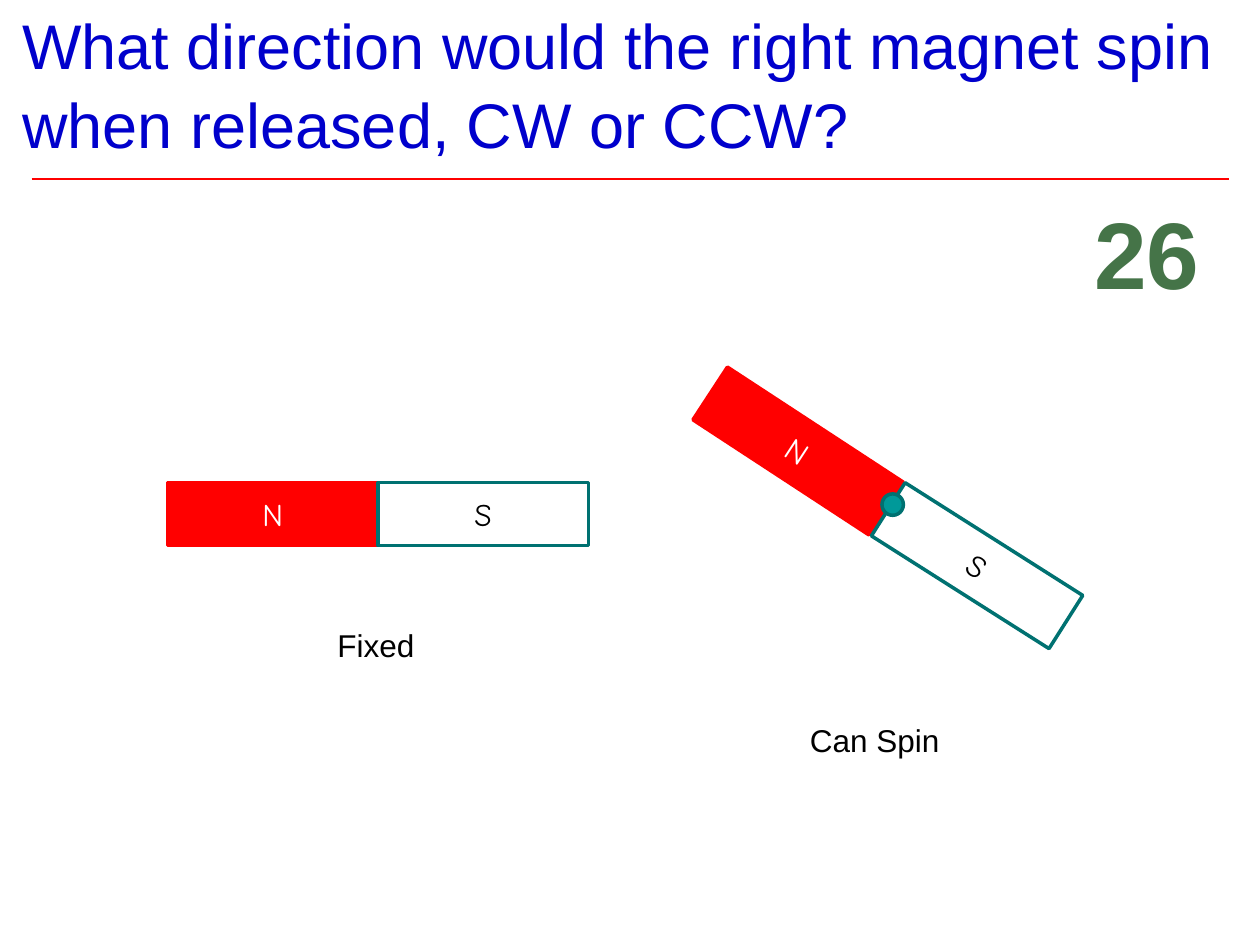
from dataclasses import dataclass

from lxml.etree import SubElement
from pptx import Presentation
from pptx.dml.color import RGBColor
from pptx.enum.shapes import MSO_CONNECTOR, MSO_SHAPE
from pptx.enum.text import MSO_ANCHOR, PP_ALIGN
from pptx.oxml.ns import qn
from pptx.util import Inches, Pt


@dataclass(frozen=True)
class Theme:
    font: str = "Arial"
    pole_font: str = "Comic Neue"
    title: str = "0000CC"
    red: str = "FF0000"
    white: str = "FFFFFF"
    black: str = "000000"
    teal: str = "009999"
    dark_teal: str = "007171"
    green: str = "457448"
    title_size: int = 36
    body_size: int = 18
    number_size: int = 54
    rule_width: float = 1.5
    outline_width: float = 2


THEME = Theme()
POLE_W, POLE_H = 1.67, 0.5


def rgb(color):
    return RGBColor.from_string(color)


def write(tf, text, size, color, font=THEME.font, align=PP_ALIGN.LEFT, bold=False):
    p = tf.paragraphs[0]
    p.text = text
    p.alignment = align
    p.font.name = font
    p.font.size = Pt(size)
    p.font.bold = bold
    p.font.color.rgb = rgb(color)
    return p


def add_text(s, box, text, size, color, wrap=False, anchor=MSO_ANCHOR.TOP, **style):
    tf = s.shapes.add_textbox(*map(Inches, box)).text_frame
    tf.word_wrap = wrap
    tf.vertical_anchor = anchor
    return write(tf, text, size, color, **style)


def add_filled(s, kind, box, fill, line):
    sp = s.shapes.add_shape(kind, *map(Inches, box))
    sp.shadow.inherit = False
    sp.fill.solid()
    sp.fill.fore_color.rgb = rgb(fill)
    sp.line.color.rgb = rgb(line)
    sp.line.width = Pt(THEME.outline_width)
    return sp


def add_pole(s, left, top, letter, fill, line, color, angle):
    sp = add_filled(s, MSO_SHAPE.RECTANGLE, (left, top, POLE_W, POLE_H), fill, line)
    sp.rotation = angle
    sp.text_frame.vertical_anchor = MSO_ANCHOR.MIDDLE
    write(sp.text_frame, letter, THEME.body_size, color,
          font=THEME.pole_font, align=PP_ALIGN.CENTER)


def add_magnet(s, north, south, angles=(0, 0)):
    """Draw both poles; north and south are their unrotated top left corners."""
    add_pole(s, *north, "N", THEME.red, THEME.red, THEME.white, angles[0])
    add_pole(s, *south, "S", THEME.white, THEME.dark_teal, THEME.black, angles[1])


def add_rule(s, left, right, y):
    line = s.shapes.add_connector(
        MSO_CONNECTOR.STRAIGHT, Inches(left), Inches(y), Inches(right), Inches(y))
    line.line.color.rgb = rgb(THEME.red)
    line.line.width = Pt(THEME.rule_width)
    SubElement(line._element.spPr, qn("a:effectLst"))


def main():
    prs = Presentation()
    prs.slide_width, prs.slide_height = Inches(10), Inches(7.5)
    s = prs.slides.add_slide(prs.slide_layouts[6])

    add_rule(s, 0.25, 9.75, 1.42)
    title = add_text(s, (0.08, 0, 9.83, 1.33),
                     "What direction would the right magnet spin when released, CW or CCW?",
                     THEME.title_size, THEME.title, wrap=True, anchor=MSO_ANCHOR.BOTTOM)
    title.line_spacing = 1.05

    add_magnet(s, (1.33, 3.83), (1.33 + POLE_W, 3.83))
    add_magnet(s, (5.5, 3.33), (6.92, 4.24), angles=(33.2, 32.4))
    add_filled(s, MSO_SHAPE.OVAL, (7, 3.92, 0.17, 0.17), THEME.teal, THEME.dark_teal)

    add_text(s, (2.58, 4.92, 0.82, 0.4), "Fixed", THEME.body_size, THEME.black)
    add_text(s, (6.33, 5.67, 1.24, 0.4), "Can Spin", THEME.body_size, THEME.black)
    add_text(s, (8.58, 1.5, 1.04, 1.01), "26", THEME.number_size, THEME.green,
             align=PP_ALIGN.CENTER, bold=True)

    prs.save("out.pptx")


if __name__ == "__main__":
    main()
